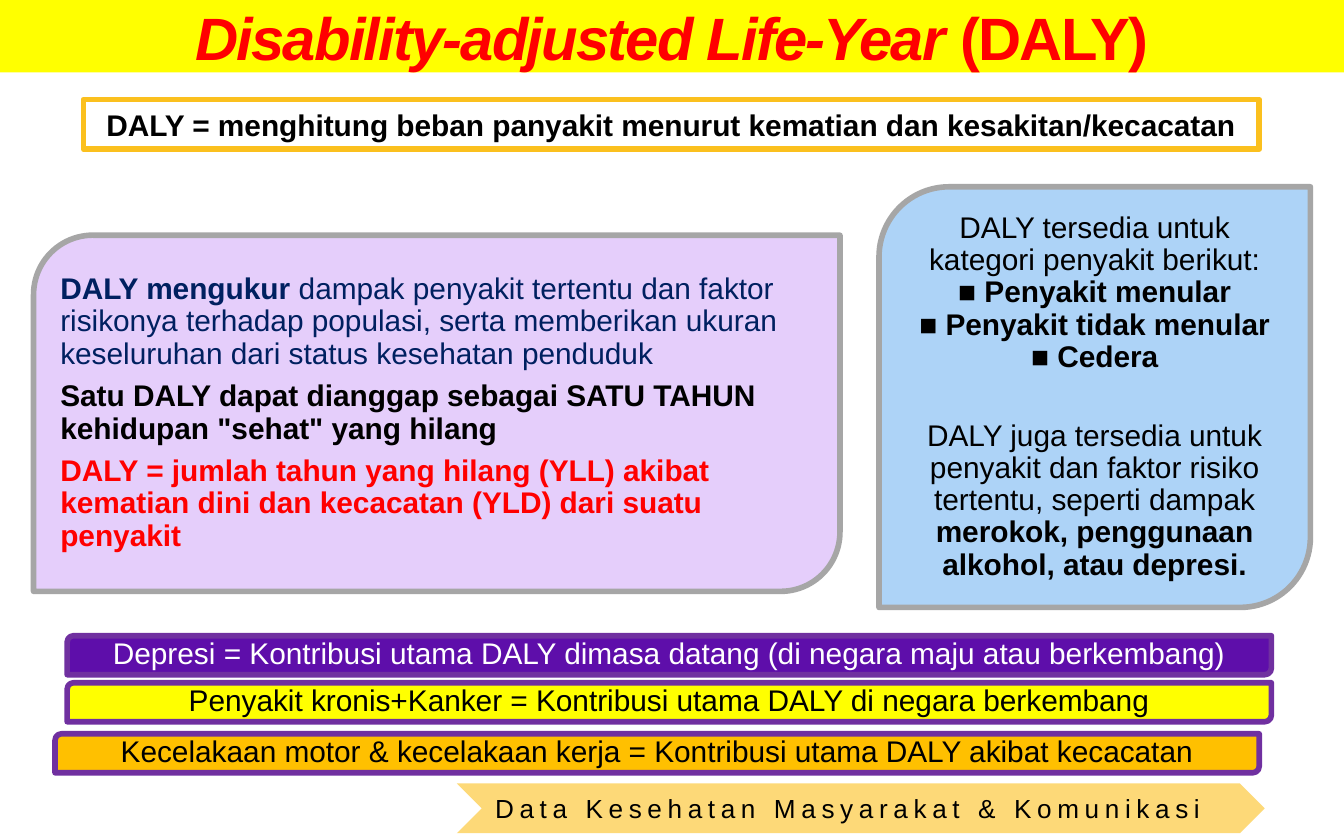
from pptx import Presentation
from pptx.dml.color import RGBColor
from pptx.enum.shapes import MSO_SHAPE
from pptx.enum.text import MSO_ANCHOR, PP_ALIGN
from pptx.util import Inches, Pt

COLORS = {
    "black": "000000", "white": "FFFFFF", "red": "FF0000", "navy": "002060",
    "yellow": "FFFF00", "gold": "FBC01E", "sand": "FDD978", "amber": "FFC000",
    "lilac": "E5CEFB", "sky": "ADD3F7", "grey": "A6A6A6",
    "violet": "5E0EAA", "purple": "7030A0",
}
COLUMNS, ROWS = 100, 62.5
LEAF = MSO_SHAPE.ROUND_2_DIAG_RECTANGLE


def color(name):
    return RGBColor.from_string(COLORS[name])


class SlideBuilder:
    font_name = "Arial"
    body_size = 16
    border_width = 3
    leaf_inset = 0.07
    paragraph_gap = 5.6

    def __init__(self, deck):
        self.page = deck.slides.add_slide(deck.slide_layouts[6])
        self.column = deck.slide_width / COLUMNS
        self.row = deck.slide_height / ROWS

    def box(self, kind, left, top, width, height, fill=None, border=None):
        box = self.page.shapes.add_shape(
            kind, round(left * self.column), round(top * self.row),
            round(width * self.column), round(height * self.row))
        box.shadow.inherit = False
        if fill:
            box.fill.solid()
            box.fill.fore_color.rgb = color(fill)
        else:
            box.fill.background()
        if border:
            box.line.color.rgb = color(border)
            box.line.width = Pt(self.border_width)
        else:
            box.line.fill.background()
        frame = box.text_frame
        frame.word_wrap = True
        frame.vertical_anchor = MSO_ANCHOR.MIDDLE
        return box

    def fill_paragraph(self, para, spans, ink="black", size=body_size,
                       align=PP_ALIGN.CENTER, spacing=0):
        para.alignment = align
        for text, style in spans:
            for index, line in enumerate(text.split("\n")):
                if index:
                    para.add_line_break()
                if not line:
                    continue
                span = para.add_run()
                span.text = line
                span.font.name = self.font_name
                span.font.size = Pt(size)
                span.font.bold = "b" in style
                span.font.italic = "i" in style
                span.font.color.rgb = color(ink)
                if spacing:
                    span.font._element.set("spc", str(spacing * 100))

    def label(self, kind, place, spans, fill=None, border=None, **style):
        box = self.box(kind, *place, fill, border)
        self.fill_paragraph(box.text_frame.paragraphs[0], spans, **style)

    def leaf(self, place, fill, border, paragraphs, align=PP_ALIGN.CENTER):
        frame = self.box(LEAF, *place, fill, border).text_frame
        frame.margin_left = frame.margin_right = Inches(self.leaf_inset)
        frame.margin_top = frame.margin_bottom = Inches(self.leaf_inset)
        for index, (ink, gap, spans) in enumerate(paragraphs):
            para = frame.add_paragraph() if index else frame.paragraphs[0]
            para.line_spacing = 0.9
            para.space_after = Pt(gap)
            self.fill_paragraph(para, spans, ink, align=align)


def main():
    deck = Presentation()
    deck.slide_width, deck.slide_height = Inches(10), Inches(6.25)
    slide = SlideBuilder(deck)
    gap = slide.paragraph_gap

    slide.label(MSO_SHAPE.CHEVRON, (34, 58.3, 60.1, 3.7),
                [("Data Kesehatan Masyarakat & Komunikasi", "")],
                fill="sand", size=14, align=PP_ALIGN.JUSTIFY, spacing=3)
    slide.label(MSO_SHAPE.RECTANGLE, (0, 0, COLUMNS, 5.4),
                [("Disability-adjusted Life-Year ", "bi"), ("(DALY)", "b")],
                fill="yellow", ink="red", size=32, spacing=-1)
    slide.label(MSO_SHAPE.RECTANGLE, (6.2, 7.4, 87.5, 3.7),
                [("DALY = menghitung beban panyakit menurut kematian dan "
                  "kesakitan/kecacatan", "b")], border="gold")

    slide.leaf((2.5, 17.5, 60, 26.5), "lilac", "grey", [
        ("navy", gap, [
            ("DALY mengukur ", "b"),
            ("dampak penyakit tertentu dan faktor risikonya terhadap populasi, "
             "serta memberikan ukuran keseluruhan dari status kesehatan "
             "penduduk", "")]),
        ("black", gap, [
            ("Satu DALY dapat dianggap sebagai SATU TAHUN kehidupan "
             "\"sehat\" yang hilang", "b")]),
        ("red", gap, [
            ("DALY = jumlah tahun yang hilang (YLL) akibat kematian dini dan "
             "kecacatan (YLD) dari suatu penyakit", "b")]),
    ], align=PP_ALIGN.LEFT)

    slide.leaf((65.4, 13.9, 32.1, 31.3), "sky", "grey", [
        ("black", 25, [
            ("DALY tersedia untuk kategori penyakit berikut:\n■ ", ""),
            ("Penyakit menular\n", "b"), ("■ ", ""),
            ("Penyakit tidak menular\n", "b"), ("■ ", ""), ("Cedera", "b")]),
        ("black", gap, [
            ("DALY juga tersedia untuk penyakit dan faktor risiko tertentu, "
             "seperti dampak ", ""),
            ("merokok, penggunaan alkohol, atau depresi.", "b")]),
    ])

    contributions = [
        (5, 47.3, "violet", "white", "Depresi = Kontribusi utama DALY dimasa "
         "datang (di negara maju atau berkembang)"),
        (5, 50.8, "yellow", "black", "Penyakit kronis+Kanker = Kontribusi utama "
         "DALY di negara berkembang"),
        (4.1, 54.6, "amber", "black", "Kecelakaan motor & kecelakaan kerja = "
         "Kontribusi utama DALY akibat kecacatan"),
    ]
    for left, top, fill, ink, text in contributions:
        slide.leaf((left, top, 89.6, 2.9), fill, "purple",
                   [(ink, gap, [(text, "")])])

    deck.save("out.pptx")


if __name__ == "__main__":
    main()
